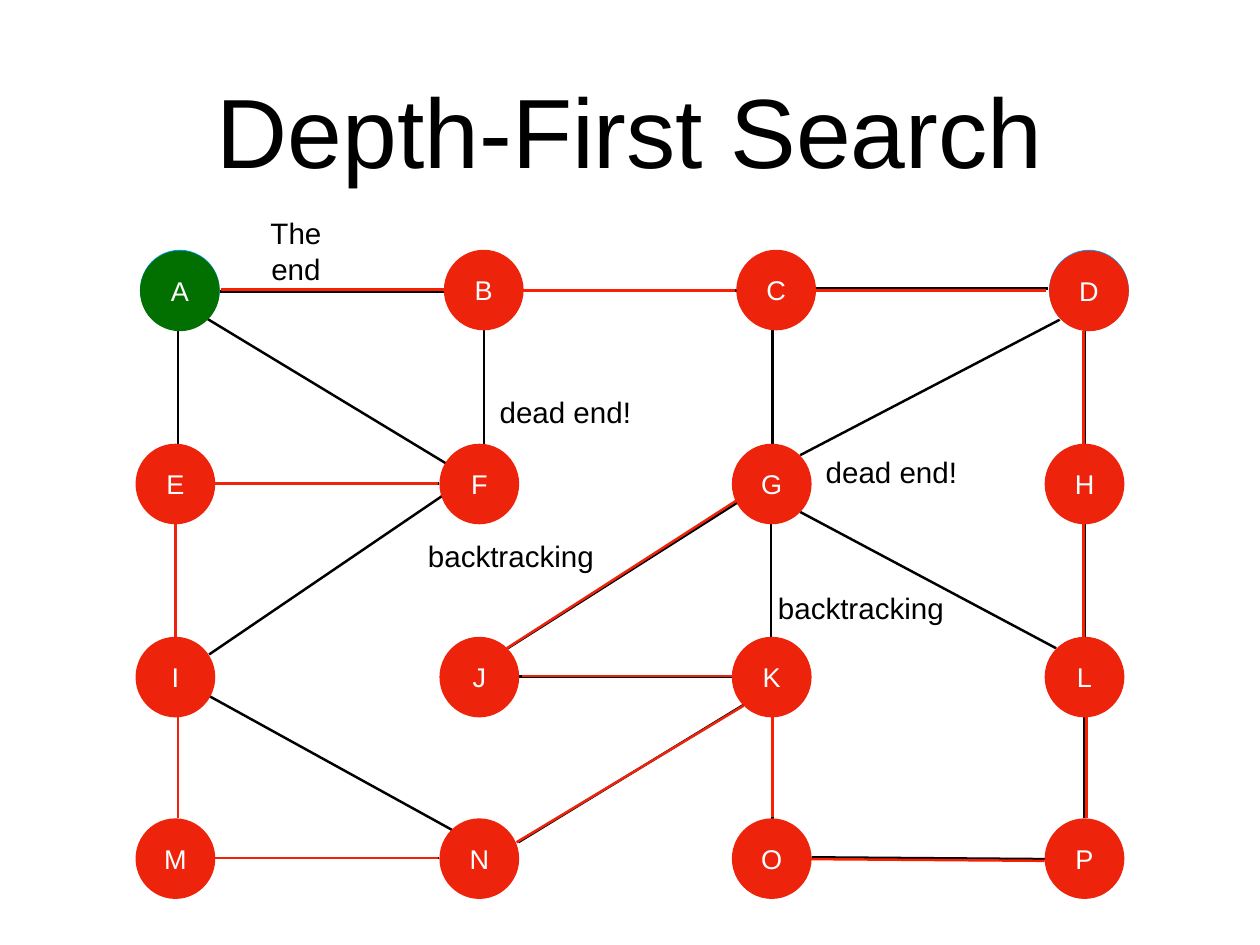
from pptx import Presentation
from pptx.dml.color import RGBColor as RGB
from pptx.enum.shapes import MSO_CONNECTOR as LINK, MSO_SHAPE as SHAPE
from pptx.enum.text import MSO_ANCHOR as ANCHOR, MSO_AUTO_SIZE as AUTO, PP_ALIGN as ALIGN
from pptx.util import Inches, Pt
from lxml import etree

HUES = {"black": "000000", "white": "FFFFFF", "blue": "00A2FF",
        "green": "027001", "red": "EE230C", "path": "FA1F00"}
TITLE = ("Depth-First Search", (1.04, 0.28, 12.14, 2.36))
ROWS = ["ABCD", "EFGH", "IJKL", "MNOP"]
LEFTS = [1.53, 4.96, 8.26, 11.79]
TOPS = [2.82, 5.01, 7.19, 9.24]
SHIFT = 0.05
NODE = (0.9, 0.91)
EDGES = [
    (2.48, 3.29, 5.01, 3.29), (5.89, 3.28, 8.33, 3.28), (9.2, 3.26, 11.83, 3.26),
    (5.84, 7.64, 8.28, 7.64), (2.01, 5.02, 2.01, 3.71), (1.98, 7.21, 1.98, 5.9),
    (2.01, 9.24, 2.01, 8.09), (8.72, 5.01, 8.72, 3.7), (8.7, 7.2, 8.7, 5.89),
    (8.72, 9.25, 8.72, 8.09), (5.46, 5.02, 5.46, 3.71), (12.24, 5.02, 12.24, 3.71),
    (12.24, 7.21, 12.24, 5.9), (12.24, 9.24, 12.24, 8.09), (9.16, 9.68, 11.8, 9.7),
    (2.43, 9.69, 4.96, 9.69), (2.34, 3.6, 5.03, 5.23), (2.36, 7.39, 4.99, 5.6),
    (2.43, 5.46, 4.96, 5.46), (5.73, 7.32, 8.36, 5.65), (9.03, 5.78, 11.92, 7.32),
    (9.03, 5.14, 11.96, 3.61), (5.85, 9.51, 8.39, 7.96), (2.29, 7.82, 5.1, 9.37),
]
FIRST = [
    (2.41, 5.46, 4.94, 5.46), (1.98, 7.2, 1.98, 5.89), (2.01, 9.24, 2.01, 8.08),
    (2.41, 9.69, 4.94, 9.69), (5.83, 9.51, 8.39, 7.97), (5.72, 7.32, 8.33, 5.64),
    (5.89, 7.63, 8.33, 7.63),
]
LAST = [
    (8.72, 9.23, 8.72, 8.08), (9.14, 9.7, 11.79, 9.72), (12.26, 9.24, 12.26, 8.09),
    (12.23, 7.19, 12.23, 5.88), (12.23, 5.05, 12.23, 3.74), (9.17, 3.28, 11.8, 3.28),
    (5.86, 3.28, 8.3, 3.28), (2.49, 3.27, 5.02, 3.27),
]
LABELS = [
    ("dead end!", (5.57, 4.4, 1.62, 0.5)),
    ("backtracking", (4.74, 6.03, 2.05, 0.5)),
    ("dead end!", (9.25, 5.08, 1.62, 0.5)),
    ("backtracking", (8.69, 6.61, 2.05, 0.5)),
    ("The end", (2.67, 2.58, 1.34, 0.5)),
]


def color(name):
    return RGB.from_string(HUES[name])


def write(shape, text, size, hue, wrap=True):
    frame = shape.text_frame
    frame.text = text
    frame.word_wrap = wrap
    frame.vertical_anchor = ANCHOR.MIDDLE
    frame.margin_left = frame.margin_right = Inches(0.06)
    frame.margin_top = frame.margin_bottom = Inches(0.06)
    para = frame.paragraphs[0]
    para.alignment = ALIGN.CENTER
    font = para.runs[0].font
    font.name, font.size = "Arial", Pt(size)
    font.color.rgb = color(hue)


def add_text(shapes, text, box, size, wrap):
    shape = shapes.add_textbox(*map(Inches, box))
    write(shape, text, size, "black", wrap)
    return shape


def add_node(shapes, name, left, top, hue):
    node = shapes.add_shape(SHAPE.OVAL, *map(Inches, (left, top, *NODE)))
    node.shadow.inherit = False
    node.fill.solid()
    node.fill.fore_color.rgb = color(hue)
    node.line.fill.background()
    write(node, name, 22, "white")


def add_lines(shapes, ends, hue):
    for end in ends:
        line = shapes.add_connector(LINK.STRAIGHT, *map(Inches, end))
        line.line.color.rgb = color(hue)
        line.line.width = Pt(2)
        props = line._element.spPr
        etree.SubElement(props, props.nsmap["a"].join("{}") + "effectLst")


def main():
    deck = Presentation()
    deck.slide_width, deck.slide_height = Inches(14.22), Inches(10.67)
    shapes = deck.slides.add_slide(deck.slide_layouts[6]).shapes

    add_text(shapes, *TITLE, 80, True)
    spots = {}
    for row, (names, top) in enumerate(zip(ROWS, TOPS)):
        for name, left in zip(names, LEFTS):
            spots[name] = (left + (SHIFT if row == 0 else 0), top)

    for name in "AD":
        add_node(shapes, name, *spots[name], "blue")
    add_lines(shapes, EDGES, "black")
    for name, (left, top) in spots.items():
        drop = 0.01 if name in "AD" else 0
        add_node(shapes, name, left, top + drop, "green" if name == "A" else "red")

    add_lines(shapes, FIRST, "red")
    for text, box in LABELS:
        label = add_text(shapes, text, box, 24, False)
        label.text_frame.auto_size = AUTO.SHAPE_TO_FIT_TEXT
    add_lines(shapes, LAST, "path")
    deck.save("out.pptx")


if __name__ == "__main__":
    main()
